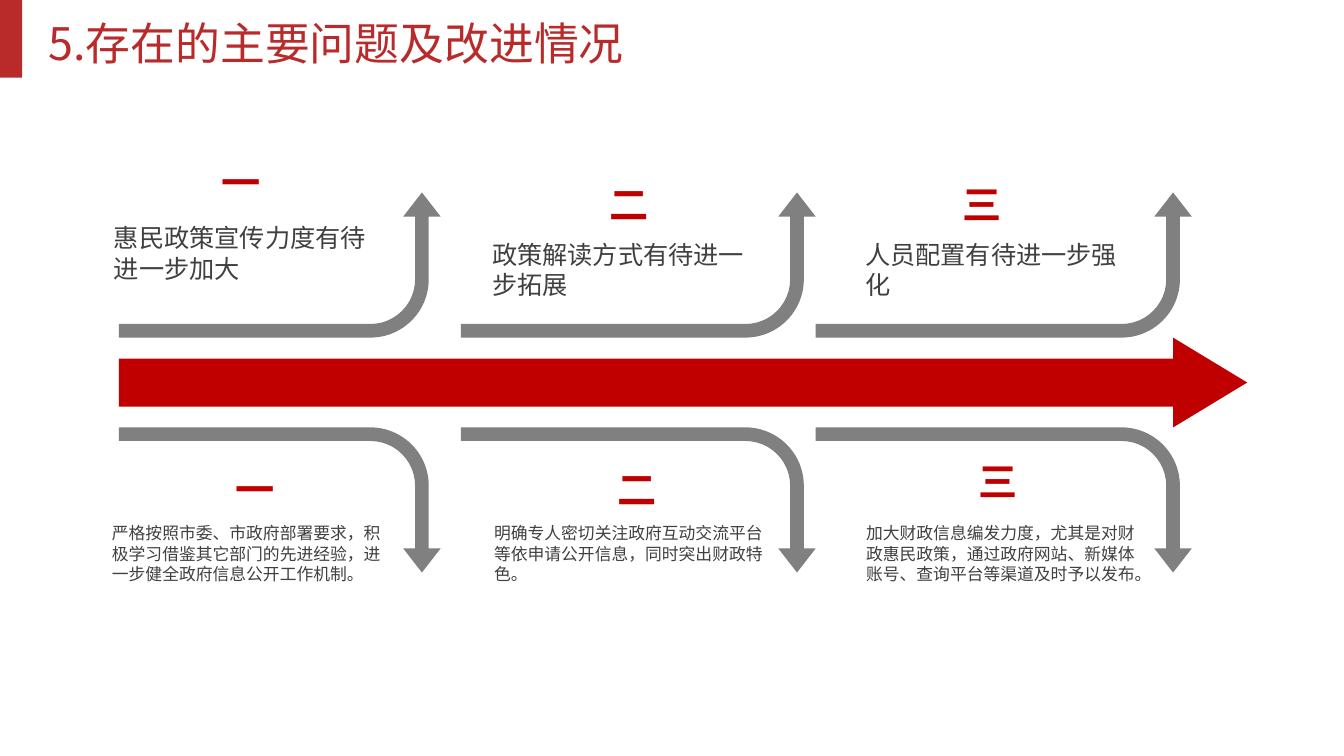
from dataclasses import dataclass

from pptx import Presentation
from pptx.dml.color import RGBColor
from pptx.enum.shapes import MSO_SHAPE
from pptx.enum.text import MSO_ANCHOR, MSO_AUTO_SIZE, PP_ALIGN
from pptx.util import Inches, Pt

TITLE = "5.存在的主要问题及改进情况"
# Each entry: numeral, text, (left, top) of the numeral
PROBLEMS = [
    ("一", "惠民政策宣传力度有待进一步加大", (2.1, 1.52)),
    ("二", "政策解读方式有待进一步拓展", (5.95, 1.74)),
    ("三", "人员配置有待进一步强化", (9.45, 1.74)),
]
IMPROVEMENTS = [
    ("一", "严格按照市委、市政府部署要求，积极学习借鉴其它部门的先进经验，进一步健全政府信息公开工作机制。", (2.24, 4.57)),
    ("二", "明确专人密切关注政府互动交流平台等依申请公开信息，同时突出财政特色。", (6.03, 4.57)),
    ("三", "加大财政信息编发力度，尤其是对财政惠民政策，通过政府网站、新媒体账号、查询平台等渠道及时予以发布。", (9.61, 4.49)),
]


@dataclass(frozen=True)
class Theme:
    font: str = "Noto Sans CJK SC"
    title: str = "B82B2A"
    accent: str = "C00000"
    branch: str = "808080"
    text: str = "404040"
    title_size: int = 32
    numeral_size: int = 28
    problem_size: int = 18
    improvement_size: int = 12
    line_pitch: float = 1.2


THEME = Theme()

# Grid: column edges, and the height of the branches around the main arrow
COLUMN_EDGES = [1.18, 4.57, 8.09, 11.82]
COLUMN_GAPS = [0.2, 0, 0]
BRANCH_H = 1.44
MAIN_TOP, MAIN_H = 3.35, 0.89
TEXT_W, TEXT_H = 2.72, 0.84
BRANCH_BEND = (0.094, 0.129, 0.166, 0.402)

# Each row: entries, branch top, points up, text size, (left, top) of each text
ROWS = [
    (PROBLEMS, MAIN_TOP - BRANCH_H, True, THEME.problem_size,
     [(1.13, 2.09), (4.88, 2.25), (8.58, 2.25)]),
    (IMPROVEMENTS, MAIN_TOP + MAIN_H, False, THEME.improvement_size,
     [(1.11, 5.07), (4.9, 5.07), (8.59, 5.07)]),
]


def add_filled(s, kind, box, color, adjustments=()):
    sp = s.shapes.add_shape(kind, *map(Inches, box))
    sp.shadow.inherit = False
    sp.fill.solid()
    sp.fill.fore_color.rgb = RGBColor.from_string(color)
    sp.line.fill.background()
    for i, value in enumerate(adjustments):
        sp.adjustments[i] = value
    return sp


def write(tf, text, size, color, bold=False, anchor=MSO_ANCHOR.TOP):
    tf.word_wrap = True
    tf.auto_size = MSO_AUTO_SIZE.NONE
    tf.vertical_anchor = anchor
    p = tf.paragraphs[0]
    p.text = text
    p.alignment = PP_ALIGN.LEFT
    p.line_spacing = Pt(size * THEME.line_pitch)
    font = p.font
    font.name, font.size, font.bold = THEME.font, Pt(size), bold
    font.color.rgb = RGBColor.from_string(color)
    # East Asian glyphs take their own typeface entry
    for r in p.runs:
        r.font.name = THEME.font
        latin = r.font._element.find("{*}latin")
        ea = latin.makeelement(latin.tag.replace("latin", "ea"), {"typeface": THEME.font})
        latin.addnext(ea)
        r.font.size, r.font.bold = Pt(size), bold
        r.font.color.rgb = RGBColor.from_string(color)


def add_branch(s, left, top, width, up):
    """Bent arrow lying on its side: a quarter turn swaps width and height."""
    x = left + (width - BRANCH_H) / 2
    y = top + (BRANCH_H - width) / 2
    sp = add_filled(s, MSO_SHAPE.BENT_ARROW, (x, y, BRANCH_H, width),
                    THEME.branch, BRANCH_BEND)
    sp.rotation = 270 if up else 90
    if up:
        sp._element.spPr.xfrm.set("flipV", "1")


def add_text(s, text, place, size):
    tf = s.shapes.add_textbox(*map(Inches, (*place, TEXT_W, TEXT_H))).text_frame
    tf.margin_left = tf.margin_right = tf.margin_top = tf.margin_bottom = 0
    write(tf, text, size, THEME.text, anchor=MSO_ANCHOR.MIDDLE)


def add_numeral(s, numeral, place):
    tf = s.shapes.add_textbox(*map(Inches, (*place, 0.7, 0.57))).text_frame
    write(tf, numeral, THEME.numeral_size, THEME.accent, bold=True)


def main():
    prs = Presentation()
    prs.slide_width, prs.slide_height = Inches(13.33), Inches(7.5)
    s = prs.slides.add_slide(prs.slide_layouts[5])

    title = s.shapes.title
    title.left, title.top, title.width, title.height = map(Inches, (0.38, 0.11, 5.98, 0.64))
    write(title.text_frame, TITLE, THEME.title_size, THEME.title)

    add_filled(s, MSO_SHAPE.RECTANGLE, (0, 0, 0.22, 0.77), THEME.title)
    add_filled(s, MSO_SHAPE.RIGHT_ARROW, (COLUMN_EDGES[0], MAIN_TOP, 11.19, MAIN_H),
               THEME.accent, (0.535, 0.825))

    for entries, top, up, size, places in ROWS:
        columns = zip(COLUMN_EDGES, COLUMN_EDGES[1:], COLUMN_GAPS)
        for (left, right, gap), (numeral, text, spot), place in zip(columns, entries, places):
            add_branch(s, left, top, right - left - gap, up)
            add_text(s, text, place, size)
            add_numeral(s, numeral, spot)

    prs.save("out.pptx")


if __name__ == "__main__":
    main()
